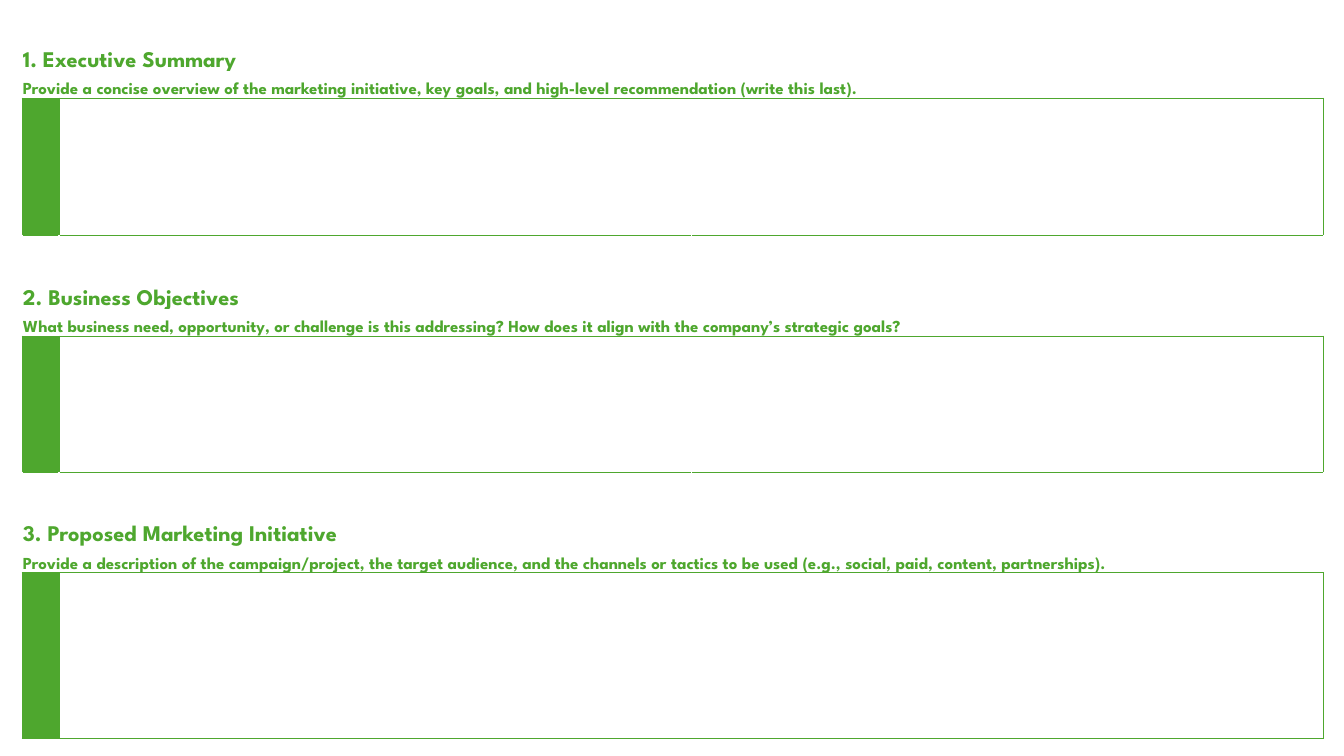
from pptx import Presentation
from pptx import util as u
from pptx.dml.color import RGBColor
from pptx.enum import text
from pptx.oxml import parse_xml
from pptx.oxml.ns import nsdecls

PX = 914400 / 100.8
HUES = {"green": "4EA72E"}
FONT = "League Spartan"
COLS = [37, 632, 632]
HEAD, HINT, GAP = 45, 26, 30
PARTS = [
    ("1. Executive Summary",
     "Provide a concise overview of the marketing initiative, key goals, "
     "and high-level recommendation (write this last).", 137),
    ("2. Business Objectives",
     "What business need, opportunity, or challenge is this addressing? "
     "How does it align with the company’s strategic goals?", 136),
    ("3. Proposed Marketing Initiative",
     "Provide a description of the campaign/project, the target audience, "
     "and the channels or tactics to be used (e.g., social, paid, content, "
     "partnerships).", 166),
]


def emu(px):
    return u.Emu(round(px * PX))


def edge(cell, sides):
    props = cell._tc.get_or_add_tcPr()
    for spot, side in enumerate(sides):
        props.insert(spot, parse_xml(
            f'<a:ln{side} {nsdecls("a")} w="6350"><a:solidFill>'
            f'<a:srgbClr val="{HUES["green"]}"/></a:solidFill></a:ln{side}>'))


def clear(cell):
    cell.fill.background()
    cell.margin_left = cell.margin_right = cell.margin_top = u.Inches(0.01)
    cell.margin_bottom = 0
    cell.text_frame.paragraphs[0].font.size = u.Pt(12)


def label(cell, words, size):
    cell.text = words
    cell.vertical_anchor = text.MSO_ANCHOR.BOTTOM
    font = cell.text_frame.paragraphs[0].font
    font.name, font.size, font.bold = FONT, u.Pt(size), True
    font.color.rgb = RGBColor.from_string(HUES["green"])


def section(table, top, title, hint, first):
    label(table.cell(top, 0), title, 16)
    table.cell(top, 0).merge(table.cell(top, 1))
    label(table.cell(top + 1, 0), hint, 12)
    table.cell(top + 1, 0).merge(table.cell(top + 1, 2))
    bar = table.cell(top + 2, 0)
    bar.fill.solid()
    bar.fill.fore_color.rgb = RGBColor.from_string(HUES["green"])
    table.cell(top + 2, 1).merge(table.cell(top + 2, 2))
    for col in range(len(COLS)):
        edge(table.cell(top + 1, col), "B")
        edge(table.cell(top + 2, col), "LRTB")
        if not first:
            edge(table.cell(top - 1, col), "T")


def main():
    """Build the slide with three proposal sections in one table."""
    deck = Presentation()
    deck.slide_width, deck.slide_height = u.Inches(13.33), u.Inches(7.5)
    slide = deck.slides.add_slide(deck.slide_layouts[6])
    rows = []
    for _, _, box in PARTS:
        rows += [HEAD, HINT, box, GAP]
    rows.pop()
    rows[0] = 43
    table = slide.shapes.add_table(
        len(rows), len(COLS), emu(22), emu(29),
        emu(sum(COLS)), emu(sum(rows))).table
    table.first_row = table.horz_banding = False
    for col, width in zip(table.columns, COLS):
        col.width = emu(width)
    for row, height in zip(table.rows, rows):
        row.height = emu(height)
    for cell in table.iter_cells():
        clear(cell)
    for num, (title, hint, _) in enumerate(PARTS):
        section(table, num * 4, title, hint, num == 0)
    deck.save("out.pptx")


if __name__ == "__main__":
    main()
